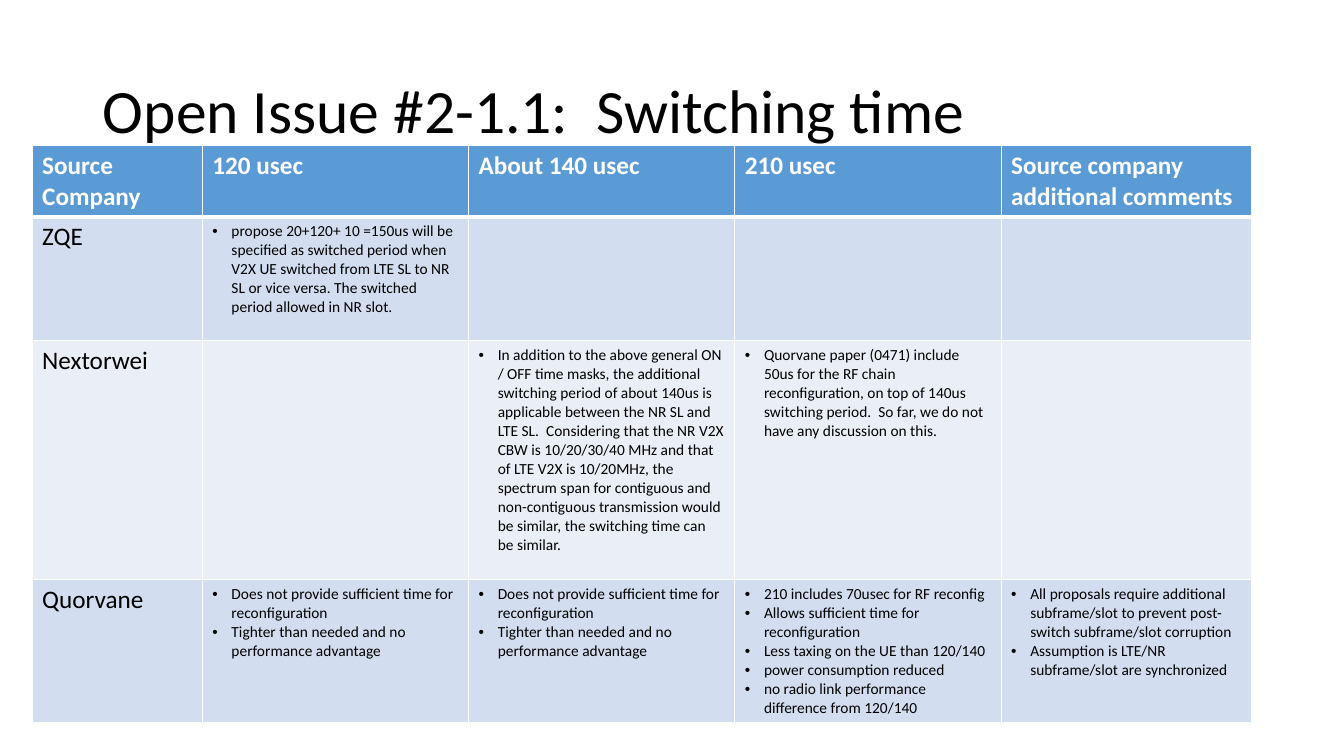
"""Builds the slide that compares company views on switching time."""
from dataclasses import dataclass

import lxml.etree
import pptx
import pptx.dml.color
import pptx.enum.text
import pptx.oxml.ns
import pptx.presentation
import pptx.slide
import pptx.table
import pptx.text.text
import pptx.util
from pptx.util import Cm, Pt


@dataclass(frozen=True)
class Theme:
    font: str = "Calibri"
    ink: str = "000000"
    paper: str = "FFFFFF"
    header: str = "5B9BD5"
    bands: tuple[str, str] = ("D2DEEF", "EAEFF7")
    title_size: int = 44
    label_size: int = 18
    bullet_size: int = 11
    thin_line: int = 1
    thick_line: int = 3


@dataclass(frozen=True)
class CompanyRow:
    company: str
    height: float
    views: tuple[tuple[str, ...], ...]


THEME = Theme()
HEADINGS = ("Source Company", "120 usec", "About 140 usec", "210 usec",
            "Source company additional comments")
COLUMN_WIDTHS = (4.29, 6.71, 6.71, 6.71, 6.32)
HEADER_HEIGHT = 1.79
BULLET_INDENT = Cm(0.48)
TOO_SHORT = ("Does not provide sufficient time for reconfiguration",
             "Tighter than needed and no performance advantage")
COMPANY_ROWS = (
    CompanyRow("ZQE", 3.12, (
        ("propose 20+120+ 10 =150us will be specified as switched period when V2X UE "
         "switched from LTE SL to NR SL or vice versa. The switched period allowed in "
         "NR slot.",), (), (), ())),
    CompanyRow("Nextorwei", 6.02, (
        (),
        ("In addition to the above general ON / OFF time masks, the additional switching "
         "period of about 140us is applicable between the NR SL and LTE SL.  Considering "
         "that the NR V2X CBW is 10/20/30/40 MHz and that of LTE V2X is 10/20MHz, the "
         "spectrum span for contiguous and non-contiguous transmission would be similar, "
         "the switching time can be similar.",),
        ("Quorvane paper (0471) include 50us for the RF chain reconfiguration, on top of "
         "140us switching period.  So far, we do not have any discussion on this.",),
        ())),
    CompanyRow("Quorvane", 3.61, (
        TOO_SHORT,
        TOO_SHORT,
        ("210 includes 70usec for RF reconfig",
         "Allows sufficient time for reconfiguration",
         "Less taxing on the UE than 120/140",
         "power consumption reduced",
         "no radio link performance difference from 120/140"),
        ("All proposals require additional subframe/slot to prevent post-switch "
         "subframe/slot corruption",
         "Assumption is LTE/NR subframe/slot are synchronized"))),
)


def set_font(para: pptx.text.text._Paragraph, size: int, color: str,
             bold: bool = False) -> None:
    para.font.name = THEME.font
    para.font.size = Pt(size)
    para.font.bold = bold
    para.font.color.rgb = pptx.dml.color.RGBColor.from_string(color)


def add_bullet(para: pptx.text.text._Paragraph) -> None:
    properties = para._p.get_or_add_pPr()
    properties.set("marL", str(BULLET_INDENT))
    properties.set("indent", str(-BULLET_INDENT))
    bullet_font = lxml.etree.SubElement(properties, pptx.oxml.ns.qn("a:buFont"))
    bullet_font.set("typeface", "Arial")
    bullet = lxml.etree.SubElement(properties, pptx.oxml.ns.qn("a:buChar"))
    bullet.set("char", "•")


def style_cell(cell: pptx.table._Cell, fill: str, top: int, bottom: int) -> None:
    cell.fill.solid()
    cell.fill.fore_color.rgb = pptx.dml.color.RGBColor.from_string(fill)
    properties = cell._tc.get_or_add_tcPr()
    widths = {"a:lnL": THEME.thin_line, "a:lnR": THEME.thin_line,
              "a:lnT": top, "a:lnB": bottom}
    for position, (tag, width) in enumerate(widths.items()):
        line = lxml.etree.Element(pptx.oxml.ns.qn(tag), w=str(Pt(width)))
        solid = lxml.etree.SubElement(line, pptx.oxml.ns.qn("a:solidFill"))
        lxml.etree.SubElement(solid, pptx.oxml.ns.qn("a:srgbClr"), val=THEME.paper)
        properties.insert(position, line)


def write_label(cell: pptx.table._Cell, label: str, color: str, bold: bool) -> None:
    para = cell.text_frame.paragraphs[0]
    para.text = label
    set_font(para, THEME.label_size, color, bold)


def write_bullets(cell: pptx.table._Cell, points: tuple[str, ...]) -> None:
    for index, point in enumerate(points):
        frame = cell.text_frame
        para = frame.add_paragraph() if index else frame.paragraphs[0]
        para.text = point
        add_bullet(para)
        set_font(para, THEME.bullet_size, THEME.ink)


def add_title(page: pptx.slide.Slide) -> None:
    title = page.shapes.title
    title.left, title.top, title.width, title.height = Cm(2.34), Cm(1.02), Cm(29.21), Cm(3.68)
    frame = title.text_frame
    frame.auto_size = pptx.enum.text.MSO_AUTO_SIZE.NONE
    frame.vertical_anchor = pptx.enum.text.MSO_ANCHOR.MIDDLE
    para = frame.paragraphs[0]
    para.text = "Open Issue #2-1.1:  Switching time"
    para.alignment = pptx.enum.text.PP_ALIGN.LEFT
    para.line_spacing = 0.9
    set_font(para, THEME.title_size, THEME.ink)


def add_comparison(page: pptx.slide.Slide) -> None:
    heights = (HEADER_HEIGHT, *(row.height for row in COMPANY_ROWS))
    table = page.shapes.add_table(
        len(heights), len(HEADINGS), Cm(0.81), Cm(3.66),
        Cm(sum(COLUMN_WIDTHS)), Cm(sum(heights))).table
    for column, width in zip(table.columns, COLUMN_WIDTHS):
        column.width = Cm(width)
    for table_row, height in zip(table.rows, heights):
        table_row.height = Cm(height)
    for column_index, heading in enumerate(HEADINGS):
        cell = table.cell(0, column_index)
        style_cell(cell, THEME.header, THEME.thin_line, THEME.thick_line)
        write_label(cell, heading, THEME.paper, True)
    for row_index, row in enumerate(COMPANY_ROWS, start=1):
        top = THEME.thick_line if row_index == 1 else THEME.thin_line
        for cell in table.rows[row_index].cells:
            style_cell(cell, THEME.bands[(row_index - 1) % 2], top, THEME.thin_line)
        write_label(table.cell(row_index, 0), row.company, THEME.ink, False)
        for column_index, points in enumerate(row.views, start=1):
            write_bullets(table.cell(row_index, column_index), points)


def main() -> None:
    deck: pptx.presentation.Presentation = pptx.Presentation()
    deck.slide_width, deck.slide_height = Cm(33.87), Cm(19.05)
    page = deck.slides.add_slide(deck.slide_layouts[5])
    add_title(page)
    add_comparison(page)
    deck.save("out.pptx")


if __name__ == "__main__":
    main()
